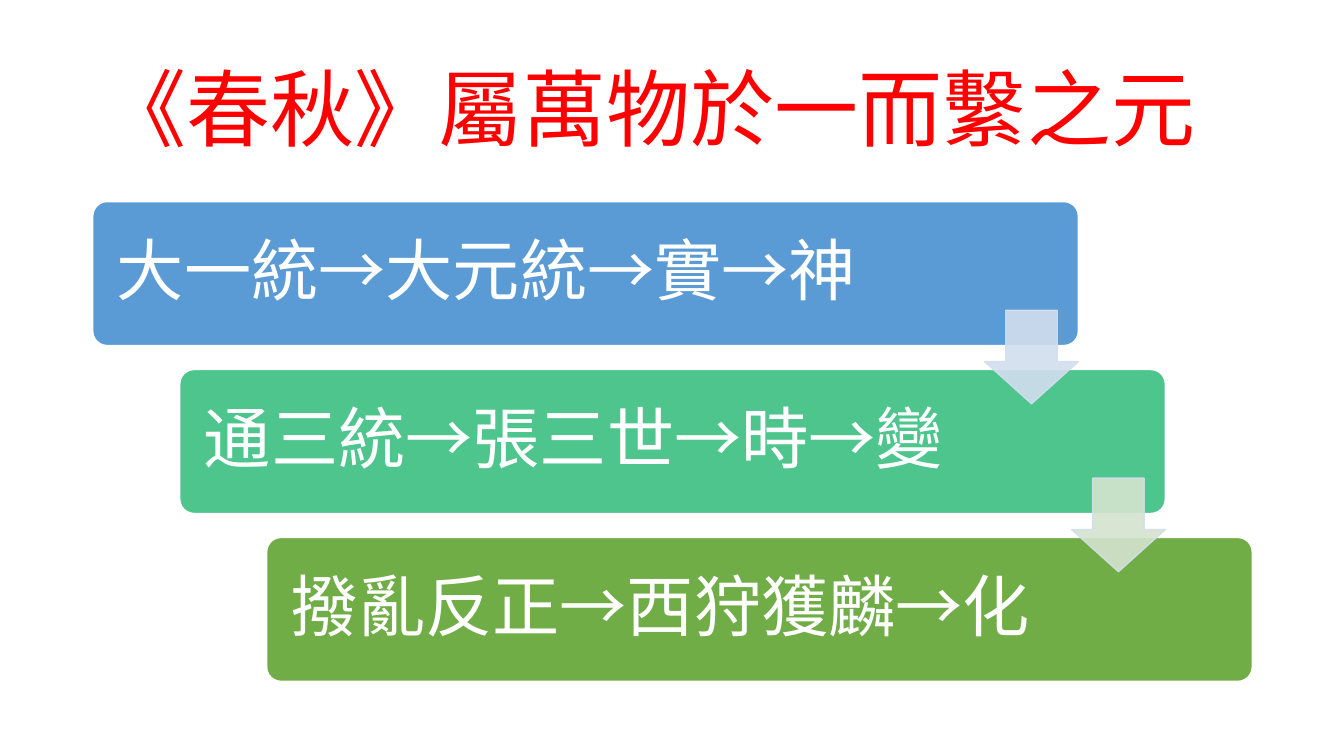
from dataclasses import dataclass

from lxml import etree
from pptx import Presentation
from pptx.dml.color import RGBColor
from pptx.enum import shapes, text
from pptx.oxml.ns import qn
from pptx.util import Inches, Pt


@dataclass(frozen=True)
class Theme:
    font: str = "Noto Sans CJK SC"
    title_size: int = 60
    step_size: int = 48
    title: str = "FF0000"
    on_step: str = "FFFFFF"
    step_line: str = "FFFFFF"
    steps: tuple = ("5B9BD5", "4DC58D", "70AD47")
    arrows: tuple = ("D2DEEF", "D5E3CF")
    arrow_line: str = "D2DEEF"
    arrow_opacity: int = 90


THEME = Theme()
TITLE = "《春秋》屬萬物於一而繫之元"
STEPS = ("大一統→大元統→實→神", "通三統→張三世→時→變", "撥亂反正→西狩獲麟→化")


def add_words(slide, box, words, size, color, inset_x, inset_y):
    label = slide.shapes.add_textbox(*map(Inches, box))
    frame = label.text_frame
    frame.word_wrap = True
    frame.vertical_anchor = text.MSO_ANCHOR.MIDDLE
    frame.margin_left = frame.margin_right = Inches(inset_x)
    frame.margin_top = frame.margin_bottom = Inches(inset_y)
    paragraph = frame.paragraphs[0]
    paragraph.text = words
    paragraph.line_spacing = 0.9
    paragraph.alignment = text.PP_ALIGN.LEFT
    font = paragraph.font
    font.name, font.size = THEME.font, Pt(size)
    font.color.rgb = RGBColor.from_string(color)
    # East Asian glyphs take their typeface from a:ea
    properties = paragraph.runs[0].font._element
    etree.SubElement(properties, qn("a:ea"), typeface=THEME.font)


def add_block(slide, preset, box, adjustments, fill, line, opacity=100):
    block = slide.shapes.add_shape(preset, *map(Inches, box))
    block.shadow.inherit = False
    for index, value in enumerate(adjustments):
        block.adjustments[index] = value
    block.fill.solid()
    block.fill.fore_color.rgb = RGBColor.from_string(fill)
    block.line.color.rgb = RGBColor.from_string(line)
    block.line.width = Pt(1)
    if opacity < 100:
        for color in block._element.spPr.iter(qn("a:srgbClr")):
            etree.SubElement(color, qn("a:alpha"), val=str(opacity * 1000))


def add_title(slide, box):
    add_words(slide, box, TITLE, THEME.title_size, THEME.title, 0.1, 0.05)


def add_staircase(slide, box):
    """Three steps descending to the right, joined by down arrows."""
    left, top, width, height = box
    step_w, step_h = width * 0.85, height * 0.3
    shift_x = (width - step_w) / 2
    shift_y = (height - step_h) / 2
    pad, arrow = 0.04, step_h * 0.65
    for i, (words, fill) in enumerate(zip(STEPS, THEME.steps)):
        x, y = left + i * shift_x, top + i * shift_y
        add_block(slide, shapes.MSO_SHAPE.ROUNDED_RECTANGLE,
                  (x, y, step_w, step_h), (0.1,), fill, THEME.step_line)
        add_words(slide, (x + pad, y + pad, 8.2, step_h - 2 * pad), words,
                  THEME.step_size, THEME.on_step, 0.2, 0.2)
    for i, fill in enumerate(THEME.arrows):
        right = left + i * shift_x + step_w
        y = top + i * shift_y + step_h * 0.755
        add_block(slide, shapes.MSO_SHAPE.DOWN_ARROW,
                  (right - arrow, y, arrow, arrow), (0.55, 0.45),
                  fill, THEME.arrow_line, THEME.arrow_opacity)


def main():
    deck = Presentation()
    deck.slide_width, deck.slide_height = Inches(13.33), Inches(7.5)
    slide = deck.slides.add_slide(deck.slide_layouts[6])
    add_title(slide, (0.92, 0.4, 11.5, 1.45))
    add_staircase(slide, (0.92, 2, 11.5, 4.76))
    deck.save("out.pptx")


if __name__ == "__main__":
    main()
